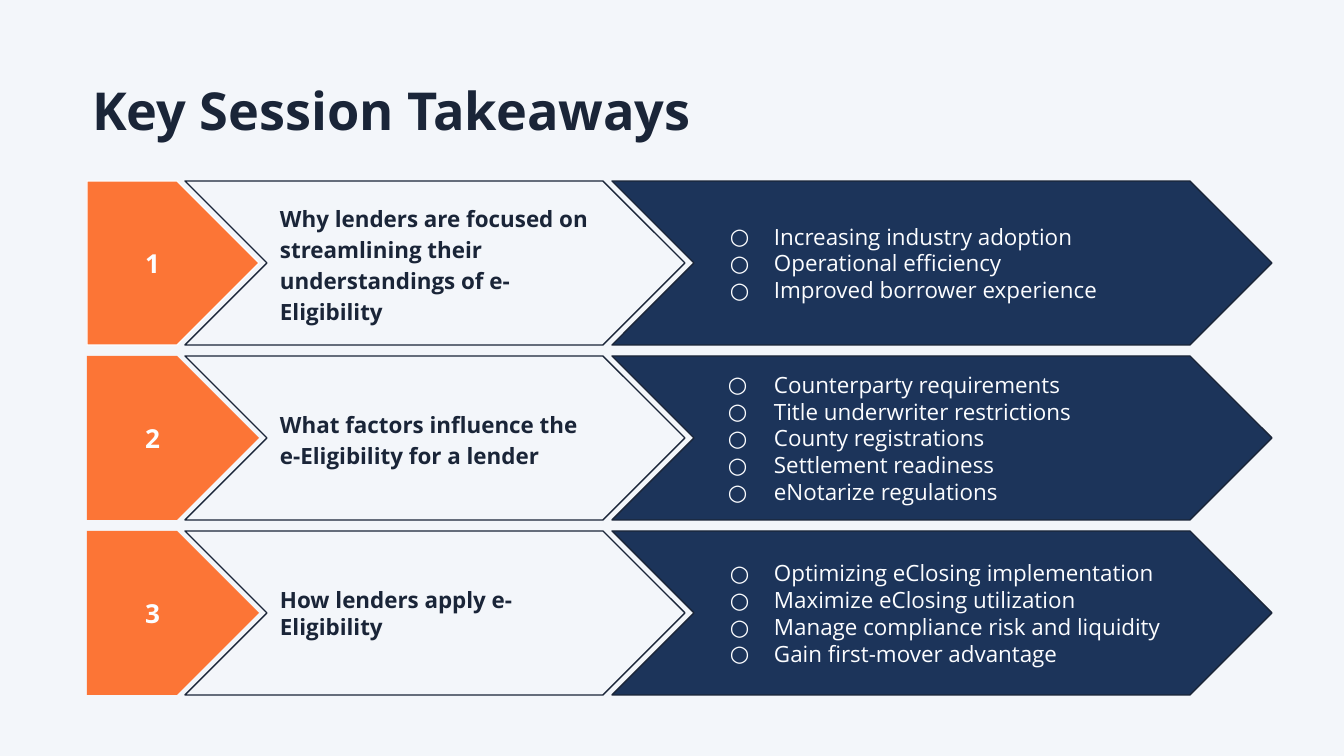
from dataclasses import dataclass

from lxml import etree
from pptx import Presentation
from pptx.dml.color import RGBColor
from pptx.enum.shapes import MSO_SHAPE
from pptx.enum.text import MSO_ANCHOR, MSO_AUTO_SIZE, PP_ALIGN
from pptx.oxml.ns import qn
from pptx.shapes.autoshape import Shape
from pptx.slide import Slide
from pptx.text.text import TextFrame, _Paragraph
from pptx.util import Emu, Pt

CHEVRON = MSO_SHAPE.CHEVRON
PENTAGON = MSO_SHAPE.PENTAGON
MIDDLE = MSO_ANCHOR.MIDDLE
NO_AUTOFIT = MSO_AUTO_SIZE.NONE
LEFT = PP_ALIGN.LEFT
CENTER = PP_ALIGN.CENTER

SLIDE_WIDTH = 1344
SLIDE_HEIGHT = 756
EMU_PER_PX = 9144000 / SLIDE_WIDTH
TITLE_ONLY_LAYOUT = 5

ROW_TOP = 181
ROW_PITCH = 175
ROW_HEIGHT = 164
TEXT_INSET = 13
BULLET_MARGIN = 67


@dataclass(frozen=True)
class Theme:
    background: RGBColor = RGBColor.from_string("F3F6FA")
    ink: RGBColor = RGBColor.from_string("1A2538")
    accent: RGBColor = RGBColor.from_string("FC7536")
    navy: RGBColor = RGBColor.from_string("1C345A")
    light: RGBColor = RGBColor.from_string("FCFDFF")
    font: str = "Open Sans"
    title_size: int = 28
    number_size: int = 14
    body_size: int = 12
    line_width: float = 0.75


@dataclass(frozen=True)
class ArrowStyle:
    preset: MSO_SHAPE
    left: int
    width: int
    fill: RGBColor
    line: RGBColor | None
    text: RGBColor
    size: int
    bold: bool
    alignment: PP_ALIGN


@dataclass(frozen=True)
class Takeaway:
    topic: str
    points: tuple[str, ...]
    line_spacing: float = 1.15
    bullet_indent: int = 44
    number_line: RGBColor | None = None


THEME = Theme()
TOPIC = ArrowStyle(CHEVRON, 185, 500, THEME.background, THEME.ink,
                   THEME.ink, THEME.body_size, True, LEFT)
NUMBER = ArrowStyle(PENTAGON, 87, 172, THEME.accent, None,
                    THEME.light, THEME.number_size, True, CENTER)
POINTS = ArrowStyle(CHEVRON, 612, 660, THEME.navy, THEME.ink,
                    THEME.light, THEME.body_size, False, LEFT)

TAKEAWAYS = (
    Takeaway(
        "Why lenders are focused on streamlining their understandings of e-Eligibility",
        ("Increasing industry adoption", "Operational efficiency",
         "Improved borrower experience"),
        number_line=THEME.light,
    ),
    Takeaway(
        "What factors influence the e-Eligibility for a lender",
        ("Counterparty requirements", "Title underwriter restrictions",
         "County registrations", "Settlement readiness", "eNotarize regulations"),
        bullet_indent=46,
    ),
    Takeaway(
        "How lenders apply e-Eligibility",
        ("Optimizing eClosing implementation", "Maximize eClosing utilization",
         "Manage compliance risk and liquidity", "Gain first-mover advantage"),
        line_spacing=1.0,
    ),
)


def px(length: int) -> Emu:
    return Emu(round(length * EMU_PER_PX))


def prepare_frame(frame: TextFrame) -> None:
    frame.word_wrap = True
    frame.auto_size = NO_AUTOFIT
    frame.vertical_anchor = MIDDLE
    frame.margin_left = frame.margin_right = px(TEXT_INSET)
    frame.margin_top = frame.margin_bottom = px(TEXT_INSET)


def format_paragraph(paragraph: _Paragraph, size: int, color: RGBColor,
                     bold: bool, alignment: PP_ALIGN) -> None:
    paragraph.alignment = alignment
    for run in paragraph.runs:
        run.font.name = THEME.font
        run.font.size = Pt(size)
        run.font.bold = bold
        run.font.color.rgb = color


def add_bullet(paragraph: _Paragraph, indent: int) -> None:
    properties = paragraph._p.get_or_add_pPr()
    properties.set("marL", str(px(BULLET_MARGIN)))
    properties.set("indent", str(-px(indent)))
    bullet_color = etree.SubElement(properties, qn("a:buClr"))
    etree.SubElement(bullet_color, qn("a:srgbClr"), val=str(THEME.light))
    etree.SubElement(properties, qn("a:buFont"), typeface=THEME.font)
    etree.SubElement(properties, qn("a:buChar"), char="○")


def add_arrow(slide: Slide, style: ArrowStyle, top: int, text: str,
              line: RGBColor | None) -> Shape:
    shape = slide.shapes.add_shape(style.preset, px(style.left), px(top),
                                   px(style.width), px(ROW_HEIGHT))
    shape.shadow.inherit = False
    shape.adjustments[0] = 0.5
    shape.fill.solid()
    shape.fill.fore_color.rgb = style.fill
    if line is None:
        shape.line.fill.background()
    else:
        shape.line.color.rgb = line
        shape.line.width = Pt(THEME.line_width)
    prepare_frame(shape.text_frame)
    shape.text_frame.text = text
    for paragraph in shape.text_frame.paragraphs:
        format_paragraph(paragraph, style.size, style.text, style.bold, style.alignment)
    return shape


def add_takeaway(slide: Slide, index: int, takeaway: Takeaway) -> None:
    top = ROW_TOP + index * ROW_PITCH
    topic = add_arrow(slide, TOPIC, top, takeaway.topic, TOPIC.line)
    topic.text_frame.paragraphs[0].line_spacing = takeaway.line_spacing
    add_arrow(slide, NUMBER, top, str(index + 1), takeaway.number_line)
    points = add_arrow(slide, POINTS, top, "\n".join(takeaway.points), POINTS.line)
    for paragraph in points.text_frame.paragraphs:
        add_bullet(paragraph, takeaway.bullet_indent)


def add_title(slide: Slide, text: str) -> None:
    title = slide.shapes.title
    title.left, title.top = px(79), px(66)
    title.width, title.height = px(1253), px(87)
    prepare_frame(title.text_frame)
    title.text_frame.text = text
    format_paragraph(title.text_frame.paragraphs[0], THEME.title_size,
                     THEME.ink, True, LEFT)


def main() -> None:
    presentation = Presentation()
    presentation.slide_width = px(SLIDE_WIDTH)
    presentation.slide_height = px(SLIDE_HEIGHT)
    slide = presentation.slides.add_slide(presentation.slide_layouts[TITLE_ONLY_LAYOUT])
    slide.background.fill.solid()
    slide.background.fill.fore_color.rgb = THEME.background
    add_title(slide, "Key Session Takeaways")
    for index, takeaway in enumerate(TAKEAWAYS):
        add_takeaway(slide, index, takeaway)
    presentation.save("out.pptx")


if __name__ == "__main__":
    main()
